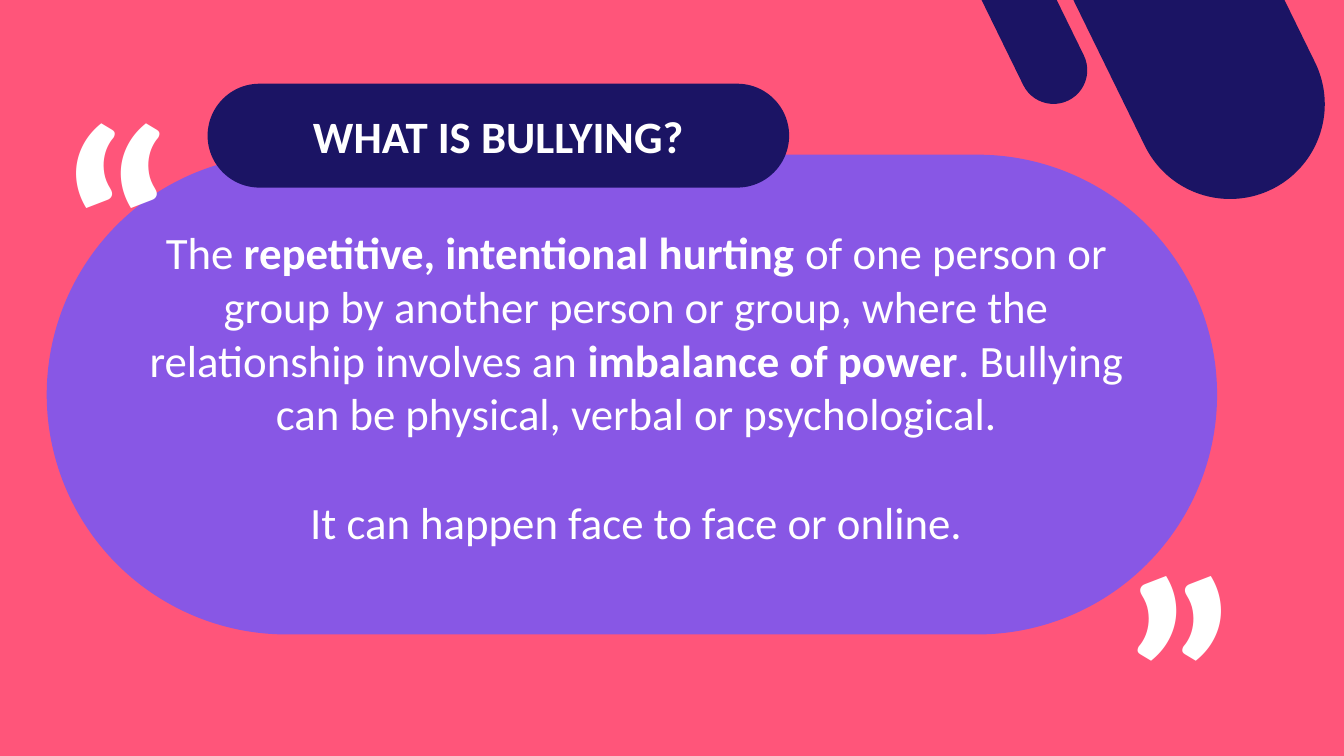
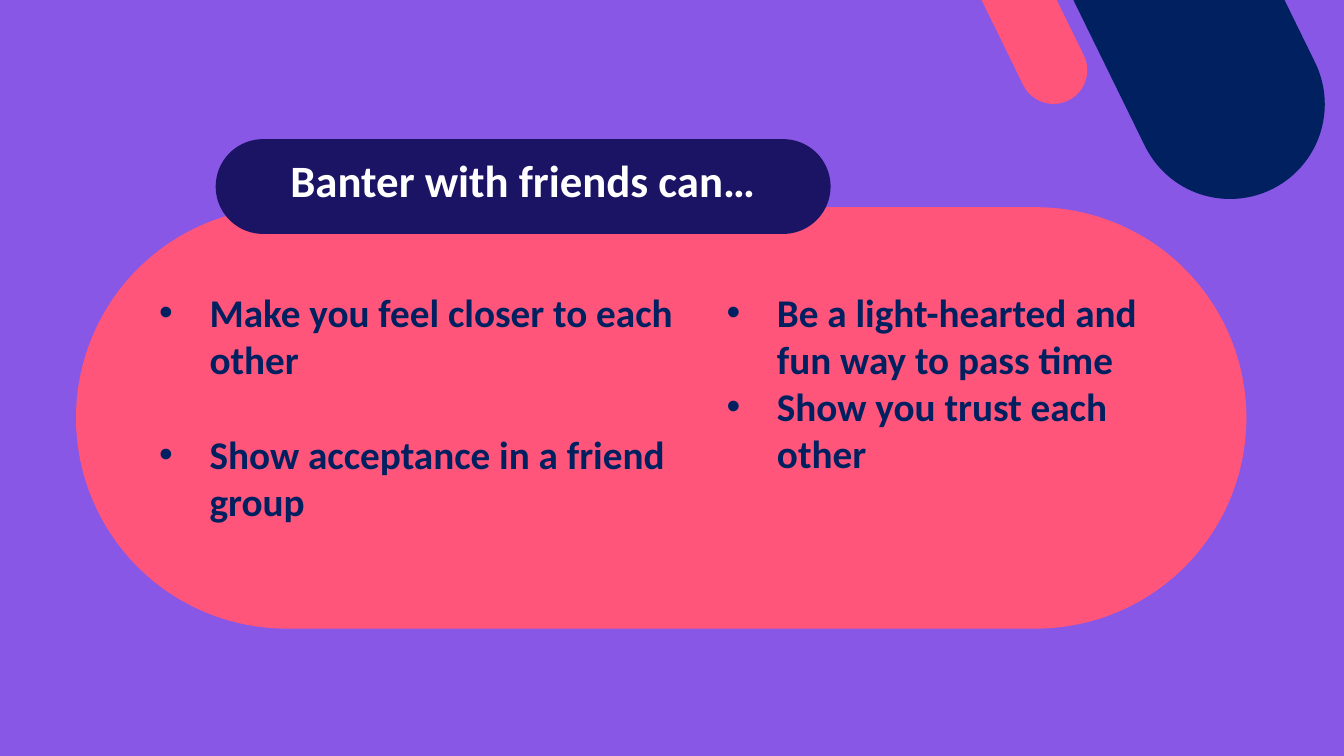
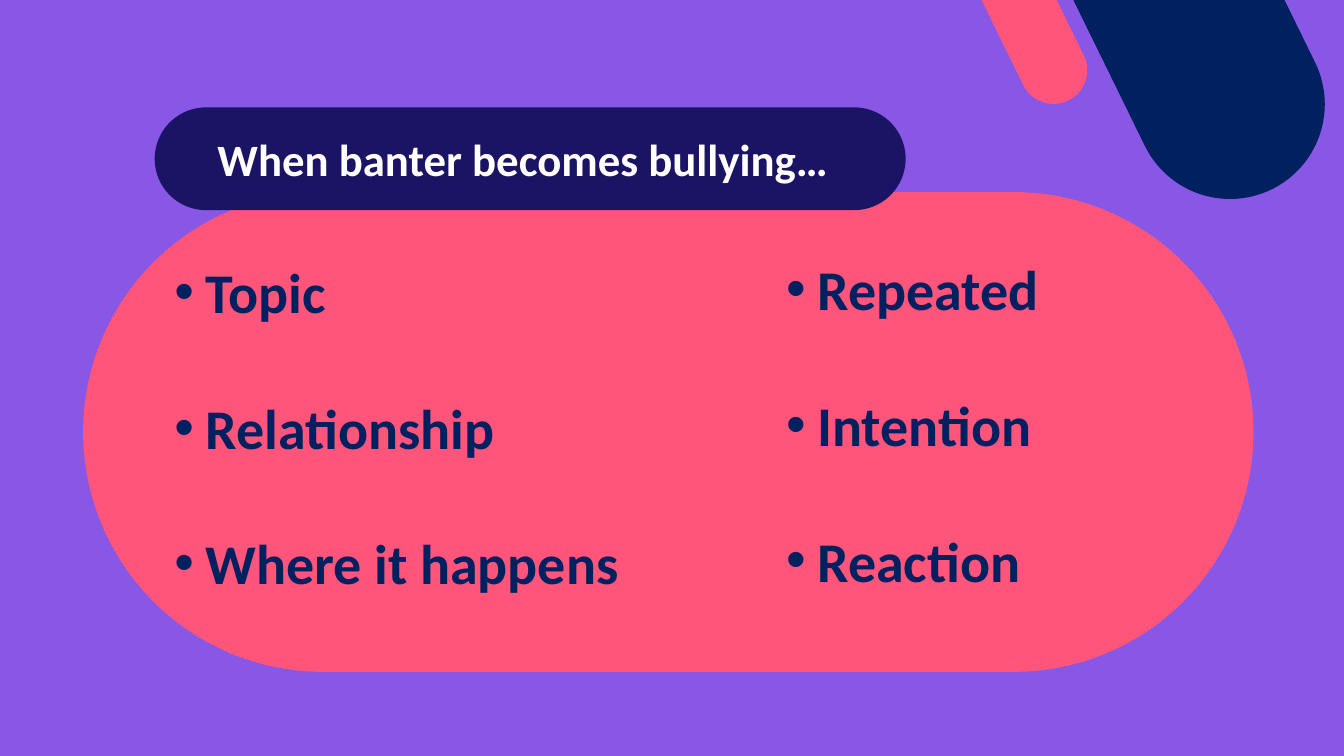
from dataclasses import dataclass

from lxml import etree
from pptx import Presentation
from pptx.dml.color import RGBColor
from pptx.enum.shapes import MSO_SHAPE
from pptx.enum.text import PP_ALIGN
from pptx.oxml.ns import qn
from pptx.util import Pt

PILL = MSO_SHAPE.ROUNDED_RECTANGLE
LEFT, CENTER = PP_ALIGN.LEFT, PP_ALIGN.CENTER


@dataclass(frozen=True)
class Theme:
    font: str = "Calibri"
    bullet_font: str = "Arial"
    pink: str = "FF557A"
    purple: str = "8857E5"
    indigo: str = "1B1464"
    navy: str = "002060"
    white: str = "FFFFFF"
    title_size: int = 32
    quote_size: int = 200
    line_height: float = 1.22


THEME = Theme()
SLIDE_SIZE = (960, 540)
PANEL_WIDTH = 836
TITLE_HEIGHT = 46
CORNER_ANGLE = 153.9
LARGE_BAR = (759.6, -214.6, 135.4, 368.6)
SMALL_BAR = (679, -187.2, 48.2, 272.9)

# Boxes are (left, top, width, height); panels are (left, top, height);
# titles are (left, top, width). A paragraph is a list of (text, bold) runs.
DEFINITION = {
    "background": THEME.pink,
    "bars": (THEME.indigo, THEME.indigo),
    "panel": (33.4, 110.5, 342.7),
    "panel_color": THEME.purple,
    "badge": (148.3, 59.8, 415.4, 74.2),
    "title": ("WHAT IS BULLYING?", (-10.1, 74.2, 732.2)),
    "columns": [{
        "box": (84.2, 157, 740.9, 278.6),
        "size": 32, "color": THEME.white, "align": CENTER,
        "indent": 0, "blank_lines": 1,
        "paragraphs": [
            [("The ", False),
             ("repetitive, intentional hurting ", True),
             ("of one person or group by another person or group, "
              "where the relationship involves an ", False),
             ("imbalance of power", True),
             (". Bullying can be physical, verbal or psychological.", False)],
            [("It can happen face to face or online.", False)],
        ],
    }],
    "quotes": [((33.1, 32.4, 135.4, 249.8), 0),
               ((758.2, 278.6, 135.4, 249.8), 180)],
}


def bullet_column(box, size, indent, blank_lines, items):
    return {"box": box, "size": size, "color": THEME.navy, "align": LEFT,
            "indent": indent, "blank_lines": blank_lines,
            "paragraphs": [[(item, True)] for item in items]}


BANTER_STYLE = {
    "background": THEME.purple,
    "bars": (THEME.navy, THEME.pink),
    "panel_color": THEME.pink,
    "quotes": [],
}
BANTER = {
    **BANTER_STYLE,
    "panel": (54.3, 148, 301),
    "badge": (154.1, 99.4, 439.2, 67.7),
    "title": ("Banter with friends can…", (48.2, 105.8, 650.9)),
    "columns": [
        bullet_column((106.6, 202.3, 383.8, 177.1), 28, 36, 1,
                      ["Make you feel closer to each other",
                       "Show acceptance in a friend group"]),
        bullet_column((511.9, 202.3, 341.3, 247), 28, 36, 0,
                      ["Be a light-hearted and fun way to pass time",
                       "Show you trust each other"]),
    ],
}
WARNING_SIGNS = {
    **BANTER_STYLE,
    "panel": (59.4, 137.2, 342.7),
    "badge": (110.5, 76.7, 536.4, 73.4),
    "title": ("When banter becomes bullying…", (48.2, 90.7, 650.9)),
    "columns": [
        bullet_column((117.4, 180.7, 415.4, 271.4), 40, 22.5, 1,
                      ["Topic", "Relationship", "Where it happens"]),
        bullet_column((554.4, 178.6, 252, 271.4), 40, 22.5, 1,
                      ["Repeated", "Intention", "Reaction"]),
    ],
}
SLIDES = [DEFINITION, BANTER, WARNING_SIGNS]


def add_pill(slide, box, color, angle=0):
    pill = slide.shapes.add_shape(PILL, *map(Pt, box))
    pill.adjustments[0] = 0.5
    pill.rotation = angle
    pill.shadow.inherit = False
    pill.fill.solid()
    pill.fill.fore_color.rgb = RGBColor.from_string(color)
    pill.line.fill.background()


def add_bullet(paragraph, indent):
    """Give the paragraph a round bullet with a hanging indent."""
    properties = paragraph._p.get_or_add_pPr()
    properties.set("marL", str(Pt(indent)))
    properties.set("indent", str(-Pt(indent)))
    etree.SubElement(properties, qn("a:buFont"), typeface=THEME.bullet_font)
    etree.SubElement(properties, qn("a:buChar"), char="•")


def add_text(slide, box, paragraphs, size, color, align=LEFT,
             indent=0, blank_lines=0, angle=0):
    """Add a text box; blank_lines is the gap between its paragraphs."""
    text_box = slide.shapes.add_textbox(*map(Pt, box))
    text_box.rotation = angle
    frame = text_box.text_frame
    frame.word_wrap = True
    for index, runs in enumerate(paragraphs):
        paragraph = frame.add_paragraph() if index else frame.paragraphs[0]
        paragraph.alignment = align
        if index and blank_lines:
            paragraph.space_before = Pt(blank_lines * size * THEME.line_height)
        if indent:
            add_bullet(paragraph, indent)
        for text, bold in runs:
            run = paragraph.add_run()
            run.text = text
            run.font.name = THEME.font
            run.font.size = Pt(size)
            run.font.bold = bold
            run.font.color.rgb = RGBColor.from_string(color)


def build_slide(deck, content):
    slide = deck.slides.add_slide(deck.slide_layouts[6])
    slide.background.fill.solid()
    slide.background.fill.fore_color.rgb = RGBColor.from_string(content["background"])

    left, top, height = content["panel"]
    add_pill(slide, (left, top, PANEL_WIDTH, height), content["panel_color"])
    for bar, color in zip((LARGE_BAR, SMALL_BAR), content["bars"]):
        add_pill(slide, bar, color, CORNER_ANGLE)

    for column in content["columns"]:
        add_text(slide, **column)
    for box, angle in content["quotes"]:
        add_text(slide, box, [[("“", True)]], THEME.quote_size, THEME.white,
                 angle=angle)

    add_pill(slide, content["badge"], THEME.indigo)
    title, position = content["title"]
    add_text(slide, (*position, TITLE_HEIGHT), [[(title, True)]],
             THEME.title_size, THEME.white, CENTER)


def main():
    deck = Presentation()
    deck.slide_width, deck.slide_height = map(Pt, SLIDE_SIZE)
    for content in SLIDES:
        build_slide(deck, content)
    deck.save("out.pptx")


if __name__ == "__main__":
    main()
